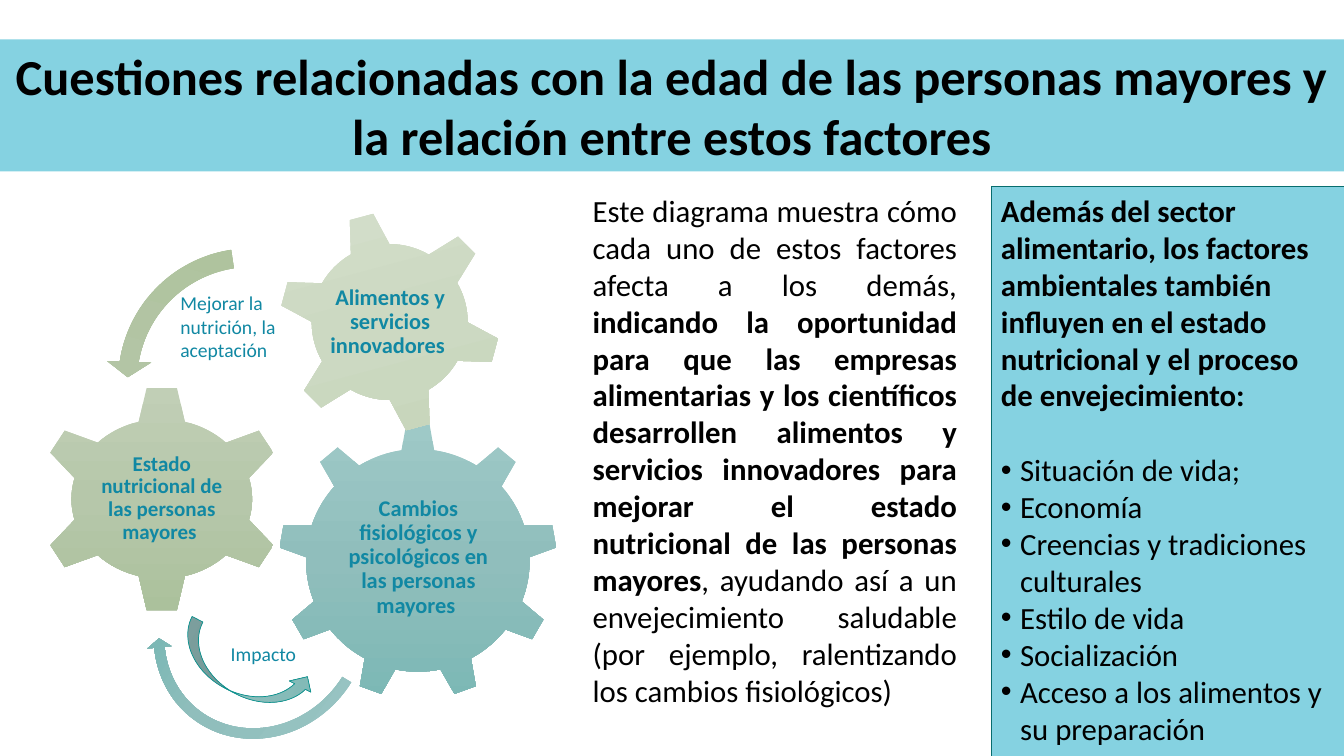
from copy import deepcopy

from lxml import etree
from pptx import Presentation
from pptx.dml.color import RGBColor
from pptx.enum.shapes import MSO_SHAPE as G
from pptx.enum.text import MSO_ANCHOR as ANCHOR, MSO_AUTO_SIZE as FIT, PP_ALIGN as AL
from pptx.oxml.ns import qn
from pptx.util import Inches, Pt

FONT = "Calibri"
BLACK, TEAL, BAND = "000000", "1188A3", "85D2E1"
BLUE = [(0, "9EC9C7"), (50, "90BEBC"), (100, "7CB8B5")]
BLUE_ARROW = [(1, "9EC9C7"), (50, "90BEBC"), (67, "7CB8B5")]
GREEN = [(0, "C1CFB6"), (50, "B6C7AA"), (100, "ABC19C")]
GREEN_ARROW = [(0, "ACC199"), (75, "B6C7AA"), (100, "ABC19C")]
PALE = [(0, "D6E0CD"), (50, "CCD9C2"), (100, "C6D5B9")]

TITLE = ("Cuestiones relacionadas con la edad de las personas mayores y "
         "la relación entre estos factores")
# preset, box, rotation, gradient, label, label box, label size
GEARS = [
    (G.GEAR_9, (2.76, 4.18, 2.77, 2.76), 0, BLUE,
     "Cambios fisiológicos y psicológicos en las personas mayores ",
     (3.32, 4.82, 1.66, 1.42), 16),
    (G.GEAR_6, (0.37, 3.82, 2.47, 2.26), 0, GREEN,
     "Estado nutricional de las personas mayores ",
     (0.97, 4.39, 1.27, 1.11), 15),
    (G.GEAR_6, (2.76, 2.09, 2.21, 2.21), 345, PALE,
     "Alimentos y servicios innovadores ",
     (3.25, 2.58, 1.24, 1.24), 16),
]
# preset, box, rotation, gradient, adjustments
ARROWS = [
    (G.CIRCULAR_ARROW, (1.4, 5.13, 2.39, 2.21), 127.3, BLUE_ARROW,
     (0.04687, 2.99029, 25.35167, 158.20893, 0.05469)),
    (G.LEFT_CIRCULAR_ARROW, (1.05, 2.34, 2.88, 2.88), 14.1, GREEN_ARROW,
     (0.06452, 4.29999, 104.89124, 148.37806, 0.07527)),
]
IMPACT_ARROW = (G.CURVED_RIGHT_ARROW, (2.18, 5.95, 0.48, 1.41), 297.6, BLUE)
# text, box, wrap
ARROW_LABELS = [
    ("Mejorar la nutrición, la aceptación", (1.69, 2.84, 1.24, 0.81), True),
    ("Impacto", (2.19, 6.32, 0.9, 0.34), False),
]
EXPLANATION = [
    ("Este diagrama muestra cómo cada uno de estos factores afecta a los demás, ", False),
    ("indicando la oportunidad para que las empresas alimentarias y los científicos "
     "desarrollen alimentos y servicios innovadores para mejorar el estado "
     "nutricional de las personas mayores", True),
    (", ayudando así a un envejecimiento saludable (por ejemplo, ralentizando los "
     "cambios fisiológicos)", False),
]
FACTORS_HEADING = ("Además del sector alimentario, los factores ambientales también "
                   "influyen en el estado nutricional y el proceso de envejecimiento:")
FACTORS = ["Situación de vida;", "Economía", "Creencias y tradiciones culturales",
           "Estilo de vida", "Socialización", "Acceso a los alimentos y su preparación"]


def rgb(value):
    return RGBColor.from_string(value)


def inches(box):
    return [Inches(v) for v in box]


def add_run(p, words, size, color=BLACK, bold=False):
    r = p.add_run()
    r.text = words
    r.font.name, r.font.size, r.font.bold = FONT, Pt(size), bold
    r.font.color.rgb = rgb(color)


def add_gradient_shape(shapes, preset, box, rotation, stops, adjustments=()):
    sp = shapes.add_shape(preset, *inches(box))
    sp.shadow.inherit = False
    sp.rotation = rotation
    for i, value in enumerate(adjustments):
        sp.adjustments[i] = value
    sp.line.fill.background()
    sp.fill.gradient()
    sp.fill.gradient_angle = 270
    stop_list = next(sp._element.spPr.iter(qn("a:gsLst")))
    stop_list.append(deepcopy(stop_list[-1]))
    for stop, (percent, color) in zip(sp.fill.gradient_stops, stops):
        stop.position = percent / 100
        stop.color.rgb = rgb(color)
    return sp


def add_text_box(shapes, box, wrap=True):
    tf = shapes.add_textbox(*inches(box)).text_frame
    tf.word_wrap = wrap
    return tf


def add_bullet(p):
    pPr = p._p.get_or_add_pPr()
    pPr.set("marL", str(Inches(0.19)))
    pPr.set("indent", str(-Inches(0.19)))
    etree.SubElement(pPr, qn("a:buFont")).set("typeface", "Arial")
    etree.SubElement(pPr, qn("a:buChar")).set("char", "•")


def add_diagram(s):
    shapes = s.shapes.add_group_shape().shapes
    for preset, box, rotation, stops, label, label_box, size in GEARS:
        add_gradient_shape(shapes, preset, box, rotation, stops)
        tf = add_text_box(shapes, label_box)
        tf.vertical_anchor = ANCHOR.MIDDLE
        tf.margin_left = tf.margin_right = tf.margin_top = tf.margin_bottom = Inches(0.02)
        p = tf.paragraphs[0]
        p.alignment, p.line_spacing = AL.CENTER, 0.9
        add_run(p, label, size, TEAL, True)
    for arrow in ARROWS:
        add_gradient_shape(shapes, *arrow)


def add_title(s):
    title = s.shapes.title
    title.left, title.top, title.width, title.height = inches((0, 0.39, 13.33, 1.31))
    title.fill.solid()
    title.fill.fore_color.rgb = rgb(BAND)
    tf = title.text_frame
    tf.word_wrap, tf.auto_size, tf.vertical_anchor = True, FIT.NONE, ANCHOR.MIDDLE
    p = tf.paragraphs[0]
    p.alignment = AL.CENTER
    add_run(p, TITLE, 36, bold=True)


def add_arrow_labels(s):
    impact = add_gradient_shape(s.shapes, *IMPACT_ARROW)
    impact.line.color.rgb = rgb("0D9390")
    impact.line.width = Pt(0.5)
    for words, box, wrap in ARROW_LABELS:
        add_run(add_text_box(s.shapes, box, wrap).paragraphs[0], words, 14, TEAL)


def add_explanation(s):
    p = add_text_box(s.shapes, (5.78, 1.85, 3.81, 5.28)).paragraphs[0]
    p.alignment = AL.JUSTIFY
    for words, bold in EXPLANATION:
        add_run(p, words, 22, bold=bold)


def add_factors(s):
    panel = s.shapes.add_shape(G.RECTANGLE, *inches((9.83, 1.85, 3.5, 5.65)))
    panel.shadow.inherit = False
    panel.fill.solid()
    panel.fill.fore_color.rgb = rgb(BAND)
    panel.line.color.rgb = rgb("086D6E")
    panel.line.width = Pt(0.5)
    tf = panel.text_frame
    tf.word_wrap, tf.vertical_anchor = True, ANCHOR.TOP
    p = tf.paragraphs[0]
    p.alignment = AL.LEFT
    add_run(p, FACTORS_HEADING, 22, bold=True)
    for i, factor in enumerate(FACTORS):
        p = tf.add_paragraph()
        p.alignment = AL.LEFT
        if i == 0:
            p.space_before = Pt(27)
        add_bullet(p)
        add_run(p, factor, 22)


def main():
    prs = Presentation()
    prs.slide_width, prs.slide_height = Inches(13.33), Inches(7.5)
    s = prs.slides.add_slide(prs.slide_layouts[5])
    add_title(s)
    add_diagram(s)
    add_arrow_labels(s)
    add_explanation(s)
    add_factors(s)
    prs.save("out.pptx")


if __name__ == "__main__":
    main()
